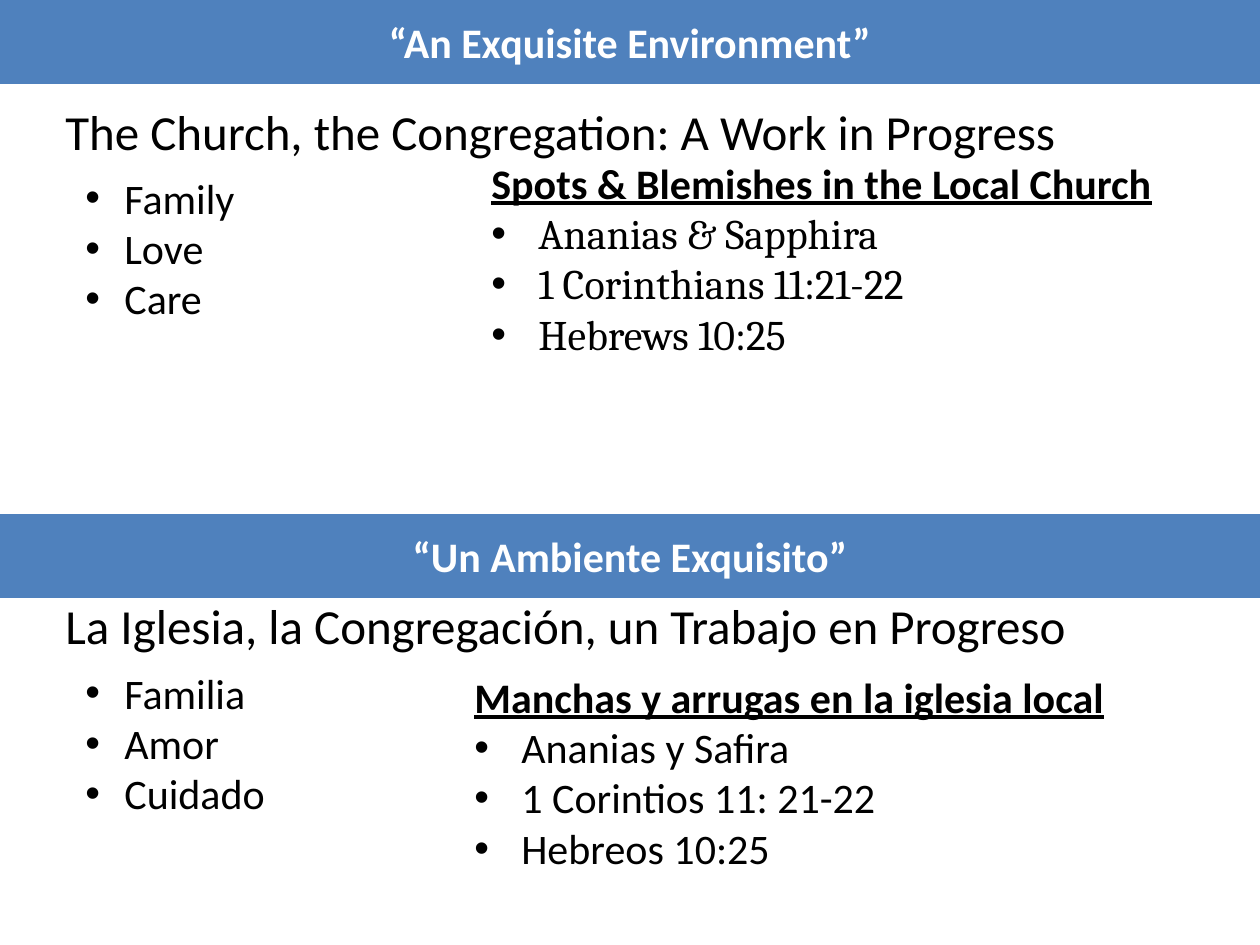
from lxml import etree
from pptx import Presentation
from pptx import util as u
from pptx.dml.color import RGBColor
from pptx.enum import shapes, text
from pptx.oxml.ns import qn

COLORS = {"banner": "4F81BD", "banner_text": "FFFFFF", "body": "000000"}

# Boxes are (left, top, width, height) in px.
HALVES = [
    {
        "banner": ("“An Exquisite Environment”", (0, 0, 1260, 84)),
        "heading": ("The Church, the Congregation: A Work in Progress", (53, 95, 1060, 72)),
        "values": (["Family", "Love", "Care"], (73, 166, 514, 165)),
        "spots": (
            "Spots & Blemishes in the Local Church",
            ["Ananias & Sapphira", "1 Corinthians 11:21-22", "Hebrews 10:25"],
            (479, 151, 730, 217),
        ),
        "spots_font": "Cambria",
    },
    {
        "banner": ("“Un Ambiente Exquisito”", (0, 514, 1260, 84)),
        "heading": ("La Iglesia, la Congregación, un Trabajo en Progreso", (53, 589, 1103, 72)),
        "values": (["Familia", "Amor", "Cuidado"], (73, 661, 514, 165)),
        "spots": (
            "Manchas y arrugas en la iglesia local",
            ["Ananias y Safira", "1 Corintios 11: 21-22", "Hebreos 10:25"],
            (462, 665, 798, 217),
        ),
        "spots_font": "Calibri",
    },
]
VALUES_INDENT, SPOTS_INDENT = 39, 47


def px(n):
    return u.Emu(round(n * 914400 / 126))


def rgb(name):
    return RGBColor.from_string(COLORS[name])


def style(p, size=24, font="Calibri", color="body", bold=False, underline=False):
    f = p.font
    f.size, f.name, f.bold, f.underline = u.Pt(size), font, bold, underline
    f.color.rgb = rgb(color)


def add_bullet(p, indent):
    """Give the paragraph a round bullet with a hanging indent."""
    pPr = p._p.get_or_add_pPr()
    pPr.set("marL", str(px(indent)))
    pPr.set("indent", str(-px(indent)))
    bullet_font = etree.Element(qn("a:buFont"), typeface="Arial")
    bullet = etree.Element(qn("a:buChar"), char="•")
    pPr.insert(0, bullet_font)
    pPr.insert(1, bullet)


def format_banner(sp, words, box):
    sp.left, sp.top, sp.width, sp.height = map(px, box)
    sp.fill.solid()
    sp.fill.fore_color.rgb = rgb("banner")
    sp.line.fill.background()
    tf = sp.text_frame
    tf.text = words
    tf.word_wrap = True
    tf.auto_size = text.MSO_AUTO_SIZE.NONE
    tf.vertical_anchor = text.MSO_ANCHOR.MIDDLE
    p = tf.paragraphs[0]
    p.alignment = text.PP_ALIGN.CENTER
    style(p, color="banner_text", bold=True)


def add_text(s, lines, box):
    """Add a wrapping text box and return its paragraphs."""
    tf = s.shapes.add_textbox(*map(px, box)).text_frame
    tf.word_wrap = True
    tf.auto_size = text.MSO_AUTO_SIZE.SHAPE_TO_FIT_TEXT
    tf.text = "\n".join(lines)
    return tf.paragraphs


def add_half(s, half, banner):
    format_banner(banner, *half["banner"])

    heading, box = half["heading"]
    style(add_text(s, [heading], box)[0], size=28)

    for p in add_text(s, *half["values"]):
        style(p)
        add_bullet(p, VALUES_INDENT)

    title, items, box = half["spots"]
    first, *rest = add_text(s, [title, *items], box)
    style(first, bold=True, underline=True)
    for p in rest:
        style(p, font=half["spots_font"])
        add_bullet(p, SPOTS_INDENT)


def main():
    prs = Presentation()
    prs.slide_width, prs.slide_height = px(1260), px(945)
    s = prs.slides.add_slide(prs.slide_layouts[5])
    english, spanish = HALVES
    add_half(s, english, s.shapes.title)
    banner = s.shapes.add_shape(shapes.MSO_SHAPE.RECTANGLE, 0, 0, px(1260), px(84))
    banner.shadow.inherit = False
    add_half(s, spanish, banner)
    prs.save("out.pptx")


if __name__ == "__main__":
    main()
